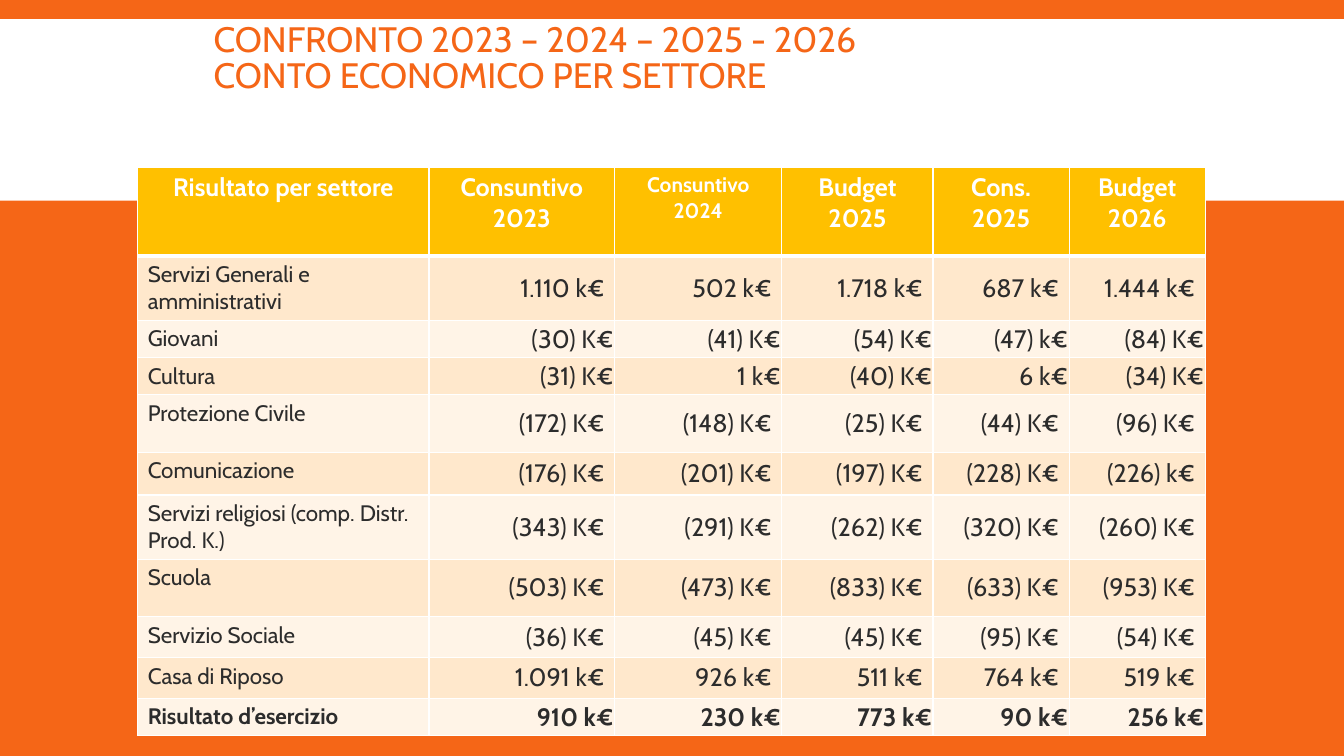
from lxml.etree import SubElement
from pptx import Presentation
from pptx.dml.color import RGBColor
from pptx.enum.shapes import MSO_SHAPE
from pptx.enum.text import MSO_ANCHOR, MSO_AUTO_SIZE, PP_ALIGN
from pptx.oxml.ns import qn
from pptx.util import Pt

FONT = "Cabin"
ORANGE, WHITE, AMBER, DARK = "F56617", "FFFFFF", "FFC000", "2C2C2C"
BANDS = ("FFE8CC", "FFF4E7")

COLUMN_WIDTHS = (208, 132.7, 119.4, 108, 97.2, 97.2)
HEADER_HEIGHT = 63.4
HEADERS = ("Risultato per settore", "Consuntivo 2023", "Consuntivo 2024",
           "Budget 2025", "Cons.\n2025", "Budget 2026")
# Row height, narrow margins, sector, values
SECTORS = (
    (41, False, "Servizi Generali e amministrativi",
     ("1.110 k€", "502 k€", "1.718 k€", "687 k€", "1.444 k€")),
    (23, True, "Giovani",
     ("(30) K€", "(41) K€", "(54) K€", "(47) k€", "(84) K€")),
    (23, True, "Cultura",
     ("(31) K€", "1 k€", "(40) K€", "6 k€", "(34) K€")),
    (41, False, "Protezione Civile",
     ("(172) K€", "(148) K€", "(25) K€", "(44) K€", "(96) K€")),
    (30.6, False, "Comunicazione",
     ("(176) K€", "(201) K€", "(197) K€", "(228) K€", "(226) k€")),
    (41, False, "Servizi religiosi (comp. Distr. Prod. K.)",
     ("(343) K€", "(291) K€", "(262) K€", "(320) K€", "(260) K€")),
    (41, False, "Scuola",
     ("(503) K€", "(473) K€", "(833) K€", "(633) K€", "(953) K€")),
    (25.2, False, "Servizio Sociale",
     ("(36) K€", "(45) K€", "(45) K€", "(95) K€", "(54) K€")),
    (25.2, False, "Casa di Riposo",
     ("1.091 k€", "926 k€", "511 k€", "764 k€", "519 k€")),
    (23, True, "Risultato d’esercizio",
     ("910 k€", "230 k€", "773 k€", "90 k€", "256 k€")),
)


def paint(color_format, color):
    color_format.rgb = RGBColor.from_string(color)


def fill_solid(fill, color):
    fill.solid()
    paint(fill.fore_color, color)


def format_paragraph(para, size, color, align, bold=False):
    para.alignment = align
    para.font.name = FONT
    para.font.size = Pt(size)
    para.font.bold = bold
    paint(para.font.color, color)


def add_borders(cell, top=1, bottom=1):
    """Draw white cell borders, placed before the fill as the schema asks."""
    properties = cell._tc.get_or_add_tcPr()
    sides = (("a:lnL", 1), ("a:lnR", 1), ("a:lnT", top), ("a:lnB", bottom))
    for position, (tag, width) in enumerate(sides):
        line = SubElement(properties, qn(tag), w=str(Pt(width)))
        solid = SubElement(line, qn("a:solidFill"))
        SubElement(solid, qn("a:srgbClr"), val=WHITE)
        properties.insert(position, line)


def write_cell(cell, text, fill, size, color, align, bold=False):
    cell.text = text
    fill_solid(cell.fill, fill)
    for para in cell.text_frame.paragraphs:
        format_paragraph(para, size, color, align, bold)


def add_title(page):
    title = page.shapes.title
    title.left, title.top, title.width, title.height = (
        Pt(145.4), Pt(11.5), Pt(702), Pt(88.6))
    frame = title.text_frame
    frame.text = "CONFRONTO 2023 – 2024 – 2025 - 2026\vCONTO ECONOMICO PER SETTORE"
    frame.word_wrap = True
    frame.auto_size = MSO_AUTO_SIZE.NONE
    frame.vertical_anchor = MSO_ANCHOR.TOP
    frame.margin_top = Pt(5.5)
    para = frame.paragraphs[0]
    para.line_spacing = 0.85
    format_paragraph(para, 25.2, ORANGE, PP_ALIGN.LEFT)


def add_white_band(page):
    """Place the white band behind the title."""
    band = page.shapes.add_shape(
        MSO_SHAPE.RECTANGLE, 0, Pt(13.7), Pt(960), Pt(129.6))
    band.shadow.inherit = False
    fill_solid(band.fill, WHITE)
    band.line.fill.background()
    page.shapes.title.element.addprevious(band.element)


def add_header(table):
    table.rows[0].height = Pt(HEADER_HEIGHT)
    for column, text in enumerate(HEADERS):
        cell = table.cell(0, column)
        size = 15 if text == "Consuntivo 2024" else 18
        write_cell(cell, text, AMBER, size, WHITE, PP_ALIGN.CENTER, True)
        add_borders(cell, bottom=3)


def add_sector(table, row, height, narrow, sector, values):
    table.rows[row].height = Pt(height)
    fill = BANDS[(row - 1) % 2]
    bold = row == len(SECTORS)
    top = 3 if row == 1 else 1
    label = table.cell(row, 0)
    write_cell(label, sector, fill, 16, DARK, PP_ALIGN.LEFT, bold)
    add_borders(label, top)
    for column, value in enumerate(values, 1):
        cell = table.cell(row, column)
        write_cell(cell, value, fill, 18, DARK, PP_ALIGN.RIGHT, bold)
        cell.vertical_anchor = MSO_ANCHOR.MIDDLE
        if narrow:
            cell.margin_left = cell.margin_right = cell.margin_top = Pt(0.75)
            cell.margin_bottom = 0
        add_borders(cell, top)


def add_results_table(page):
    height = Pt(404.6)
    graphic = page.shapes.add_table(
        len(SECTORS) + 1, len(HEADERS), Pt(98.4), Pt(119.6),
        Pt(sum(COLUMN_WIDTHS)), height)
    table = graphic.table
    table.horz_banding = False
    for column, width in zip(table.columns, COLUMN_WIDTHS):
        column.width = Pt(width)
    add_header(table)
    for row, sector in enumerate(SECTORS, 1):
        add_sector(table, row, *sector)
    graphic.height = height


def main():
    deck = Presentation()
    deck.slide_width, deck.slide_height = Pt(960), Pt(540)
    page = deck.slides.add_slide(deck.slide_layouts[5])
    fill_solid(page.background.fill, ORANGE)
    add_title(page)
    add_white_band(page)
    add_results_table(page)
    deck.save("out.pptx")


if __name__ == "__main__":
    main()
